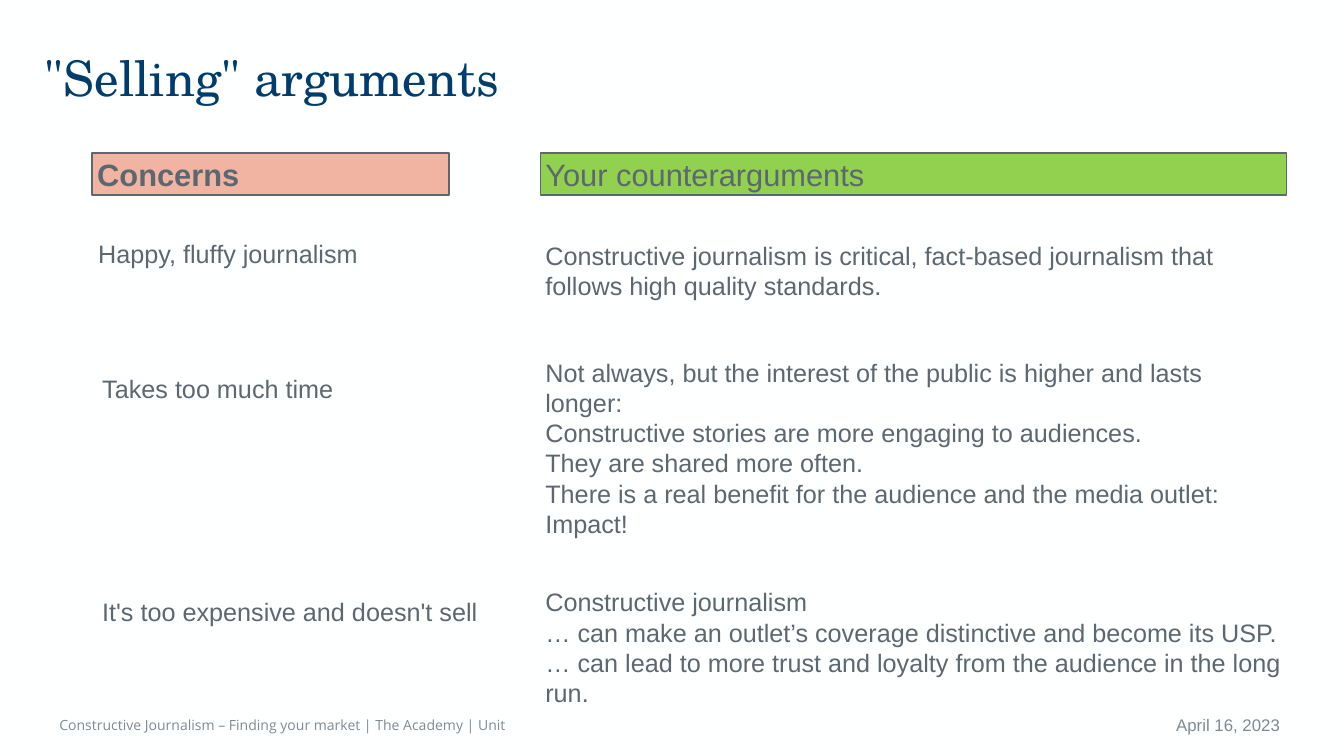
import pptx
import pptx.util
import pptx.dml.color
import pptx.enum.shapes
import pptx.enum.text

Cm, Pt = pptx.util.Cm, pptx.util.Pt
ALIGN = pptx.enum.text.PP_ALIGN
ANCHOR = pptx.enum.text.MSO_ANCHOR
SLATE, GREY, NAVY = "5D676F", "808A93", "003D6D"

# Concern: text, indent, drop below the header row, width
# Answer: lines, drop below the header row, width, height
ARGUMENTS = [
    {"concern": ("Happy, fluffy journalism", 0.05, 4.19, 17.25),
     "answer": (["Constructive journalism is critical, fact-based journalism "
                 "that follows high quality standards."], 4.29, 35.74, 3.33)},
    {"concern": ("Takes too much time", 0.25, 10.99, 17.25),
     "answer": (["Not always, but the interest of the public is higher and lasts longer:",
                 "Constructive stories are more engaging to audiences.",
                 "They are shared more often.",
                 "There is a real benefit for the audience and the media outlet: Impact!"],
                10.16, 37.29, 9.5)},
    {"concern": ("It's too expensive and doesn't sell", 0.25, 22.22, 20.62),
     "answer": (["Constructive journalism",
                 "… can make an outlet’s coverage distinctive and become its USP.",
                 "… can lead to more trust and loyalty from the audience in the long run."],
                21.74, 39.09, 9.5)},
]


def colour(hex_string):
    return pptx.dml.color.RGBColor.from_string(hex_string)


def write(shape, lines, size, ink=SLATE, font="Arial", bold=False,
          align=ALIGN.LEFT, anchor=ANCHOR.TOP, spacing=None):
    frame = shape.text_frame
    frame.word_wrap = True
    frame.vertical_anchor = anchor
    for number, line in enumerate(lines):
        paragraph = frame.add_paragraph() if number else frame.paragraphs[0]
        paragraph.alignment = align
        if spacing:
            paragraph.line_spacing = Pt(spacing)
        run = paragraph.add_run()
        run.text = line
        run.font.size = Pt(size)
        run.font.name = font
        run.font.bold = bold
        run.font.color.rgb = colour(ink)


def add_text(slide, box, lines, size, **style):
    write(slide.shapes.add_textbox(*map(Cm, box)), lines, size, **style)


def add_header(slide, box, label, fill, bold=False):
    header = slide.shapes.add_shape(
        pptx.enum.shapes.MSO_SHAPE.RECTANGLE, *map(Cm, box))
    header.shadow.inherit = False
    header.fill.solid()
    header.fill.fore_color.rgb = colour(fill)
    header.line.color.rgb = colour(SLATE)
    header.line.width = Pt(2.25)
    write(header, [label], 44, bold=bold)


def add_concerns(slide, left, top, width):
    add_header(slide, (left, top, width, 2.13), "Concerns", "F1B4A2", bold=True)
    for argument in ARGUMENTS:
        concern, indent, drop, concern_width = argument["concern"]
        add_text(slide, (left + indent, top + drop, concern_width, 1.8), [concern], 36)


def add_counterarguments(slide, left, top, width):
    add_header(slide, (left, top, width, 2.13), "Your counterarguments", "92D050")
    for argument in ARGUMENTS:
        lines, drop, answer_width, height = argument["answer"]
        add_text(slide, (left, top + drop, answer_width, height), lines, 36)


def add_footer(slide, left, top, width, height):
    add_text(slide, (left, top, 39.62, height),
             ["Constructive Journalism – Finding your market | The Academy | Unit"],
             20, ink=GREY, font="Open Sans", anchor=ANCHOR.MIDDLE)
    date_width = 12
    add_text(slide, (left + width - date_width, top, date_width, height),
             ["April 16, 2023"], 24, ink=GREY, align=ALIGN.RIGHT, anchor=ANCHOR.MIDDLE)


def main():
    deck = pptx.Presentation()
    deck.slide_width, deck.slide_height = Cm(67.72), Cm(38.1)
    slide = deck.slides.add_slide(deck.slide_layouts[6])
    slide.background.fill.solid()
    slide.background.fill.fore_color.rgb = colour("FEFFFF")

    # Title
    add_text(slide, (2, 2, 62.76, 3.25), ['"Selling" arguments'], 70,
             ink=NAVY, font="TeX Gyre Schola", spacing=91)
    # Two columns: what editors fear, what to reply
    add_concerns(slide, 4.65, 7.7, 17.98)
    add_counterarguments(slide, 27.23, 7.7, 37.59)
    # Footer line with date
    add_footer(slide, 2.74, 35.74, 62, 1.6)

    deck.save("out.pptx")


if __name__ == "__main__":
    main()
